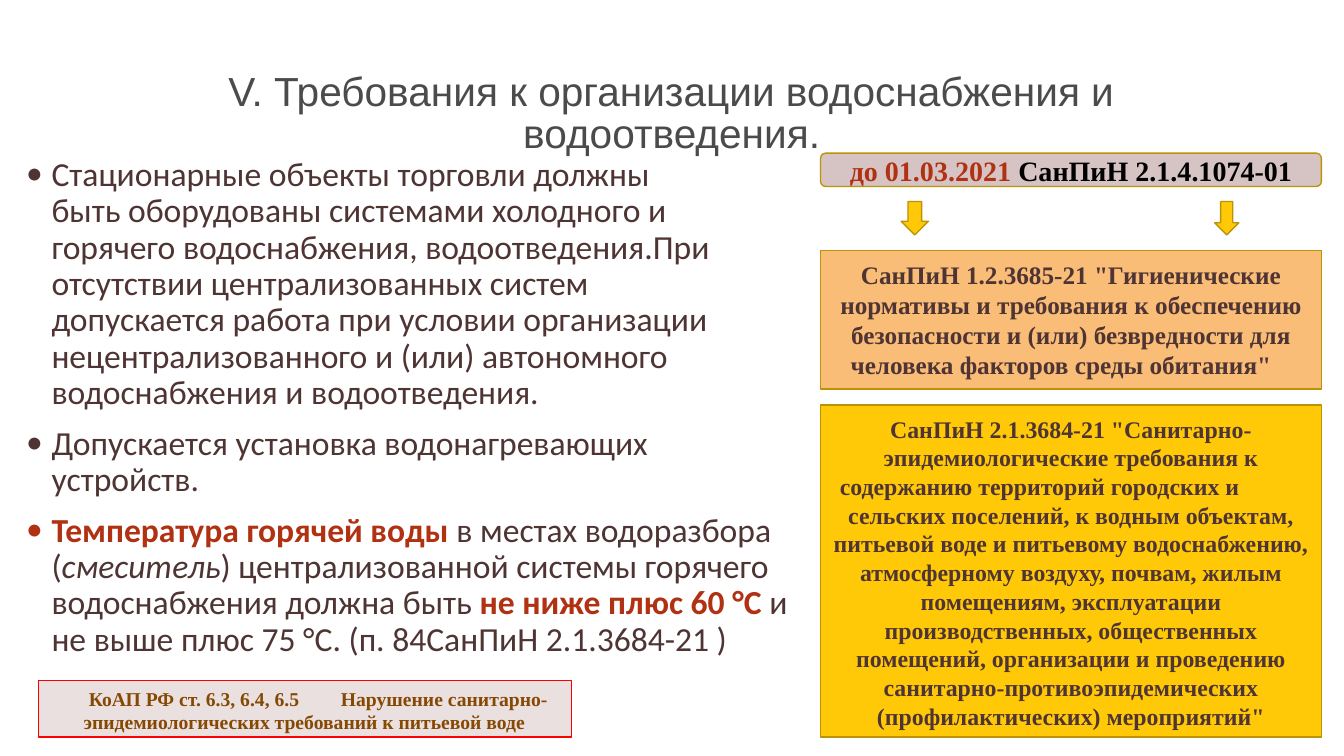
"""Build the slide on water supply and drainage requirements."""
from lxml import etree
from pptx import Presentation
from pptx import util as u
from pptx.dml.color import RGBColor
from pptx.enum import shapes, text
from pptx.oxml.ns import qn

COLORS = {
    "title": "4B4B4B", "body": "4F3434", "accent": "B13113", "black": "000000",
    "penalty": "854904", "outline": "BB9304", "red": "FF0000", "header": "D6C3C3",
    "peach": "FABD77", "yellow": "FFC908", "blush": "EBE0E0",
}
SERIF = "Times New Roman"

TITLE = "V. Требования к организации водоснабжения и водоотведения."
REQUIREMENTS = [
    [("Стационарные объекты торговли должны\vбыть оборудованы системами холодного и "
      "горячего водоснабжения, водоотведения.При отсутствии централизованных систем "
      "допускается работа при условии организации нецентрализованного и (или) "
      "автономного водоснабжения и водоотведения.", "plain")],
    [("Допускается установка водонагревающих устройств.", "plain")],
    [("Температура горячей воды ", "strong"),
     ("в местах водоразбора (", "plain"),
     ("смеситель", "italic"),
     (") централизованной системы горячего водоснабжения должна быть ", "plain"),
     ("не ниже плюс 60 °C ", "strong"),
     ("и не выше плюс 75 °C. (п. 84СанПиН 2.1.3684-21 )", "plain")],
]
REQUIREMENT_RIGHT_MARGINS = [2.03, 0, 0]
HEADER = [("до 01.03.2021 ", "accent"), ("СанПиН 2.1.4.1074-01", "black")]
REGULATIONS = [
    {"top": 6.32, "height": 3.48, "fill": "peach", "size": 18, "pitch": 21.4,
     "paragraphs": [
         ("СанПиН 1.2.3685-21 \"Гигиенические нормативы и требования к обеспечению "
          "безопасности и (или) безвредности для", 0.46, 0.46),
         ("человека факторов среды обитания\"", 0, 0.5)]},
    {"top": 10.21, "height": 8.36, "fill": "yellow", "size": 17, "pitch": 20.5,
     "paragraphs": [
         ("СанПиН 2.1.3684-21 \"Санитарно- эпидемиологические требования к", 1.58, 1.58),
         ("содержанию территорий городских и", 0, 1.58),
         ("сельских поселений, к водным объектам, питьевой воде и питьевому "
          "водоснабжению, атмосферному воздуху, почвам, жилым помещениям, "
          "эксплуатации", 0.32, 0.32),
         ("производственных, общественных помещений, организации и проведению "
          "санитарно-противоэпидемических (профилактических) мероприятий\"",
          0.86, 0.86)]},
]
PENALTY = [
    ("КоАП РФ ст. 6.3, 6.4, 6.5\tНарушение санитарно-", 1.27),
    ("эпидемиологических требований к питьевой воде", 1.14),
]
PENALTY_TAB = 6.85
ARROWS = [(22.71, 0.69), (30.61, 0.61)]
COLUMN_LEFT, COLUMN_WIDTH = 20.68, 12.62


def rgb(name):
    return RGBColor.from_string(COLORS[name])


def prepare(shape, top_inset=0):
    frame = shape.text_frame
    frame.word_wrap = True
    frame.margin_left = frame.margin_right = frame.margin_bottom = 0
    frame.margin_top = u.Cm(top_inset)
    frame.vertical_anchor = text.MSO_ANCHOR.TOP
    return frame


def add_box(slide, kind, place, fill, outline="outline"):
    shape = slide.shapes.add_shape(kind, *map(u.Cm, place))
    shape.shadow.inherit = False
    shape.fill.solid()
    shape.fill.fore_color.rgb = rgb(fill)
    shape.line.color.rgb = rgb(outline)
    shape.line.width = u.Pt(0.96)
    return shape


def add_textbox(slide, place):
    return prepare(slide.shapes.add_textbox(*map(u.Cm, place)))


def paragraph_at(frame, index):
    return frame.add_paragraph() if index else frame.paragraphs[0]


def set_margins(paragraph, left, right=0, first=0):
    properties = paragraph._p.get_or_add_pPr()
    for key, value in (("marL", left), ("marR", right), ("indent", first)):
        properties.set(key, str(int(u.Cm(value))))
    return properties


def style(paragraph, font_name, size, color, bold=False):
    for run in paragraph.runs:
        run.font.name = font_name
        run.font.size = u.Pt(size)
        run.font.color.rgb = rgb(color)
        run.font.bold = bold


def add_bullet(properties, color):
    bullet_color = etree.SubElement(properties, qn("a:buClr"))
    etree.SubElement(bullet_color, qn("a:srgbClr"), val=COLORS[color])
    etree.SubElement(properties, qn("a:buFont"), typeface="Calibri")
    etree.SubElement(properties, qn("a:buChar"), char="•")


def add_title(slide):
    paragraph = add_textbox(slide, (5.15, 1.83, 23.56, 2.2)).paragraphs[0]
    paragraph.text = TITLE
    paragraph.alignment = text.PP_ALIGN.CENTER
    paragraph.line_spacing = u.Pt(30.2)
    style(paragraph, "Arial", 29, "title")


def add_requirements(slide):
    frame = add_textbox(slide, (0.64, 3.96, 19.43, 12.7))
    for index, (parts, right) in enumerate(zip(REQUIREMENTS, REQUIREMENT_RIGHT_MARGINS)):
        paragraph = paragraph_at(frame, index)
        paragraph.text = "".join(parts[0][0]) if len(parts) == 1 else ""
        if len(parts) > 1:
            for words, _ in parts:
                paragraph.add_run().text = words
        properties = set_margins(paragraph, 0.66, right, -0.64)
        add_bullet(properties, "accent" if parts[0][1] == "strong" else "body")
        paragraph.line_spacing = u.Pt(25.9)
        if index:
            paragraph.space_before = u.Pt(10.4)
        style(paragraph, "Calibri", 24, "body")
        for run, (_, look) in zip(paragraph.runs, parts):
            run.font.italic = look == "italic"
            if look == "strong":
                run.font.bold = True
                run.font.color.rgb = rgb("accent")


def add_header(slide):
    shape = add_box(slide, shapes.MSO_SHAPE.ROUNDED_RECTANGLE,
                    (COLUMN_LEFT, 3.86, COLUMN_WIDTH, 0.84), "header")
    shape.adjustments[0] = 0.15
    frame = prepare(shape)
    frame.vertical_anchor = text.MSO_ANCHOR.MIDDLE
    paragraph = frame.paragraphs[0]
    paragraph.alignment = text.PP_ALIGN.CENTER
    for words, _ in HEADER:
        paragraph.add_run().text = words
    style(paragraph, SERIF, 20, "black", True)
    for run, (_, color) in zip(paragraph.runs, HEADER):
        run.font.color.rgb = rgb(color)


def add_regulation(slide, regulation):
    shape = add_box(slide, shapes.MSO_SHAPE.RECTANGLE,
                    (COLUMN_LEFT, regulation["top"], COLUMN_WIDTH, regulation["height"]),
                    regulation["fill"])
    frame = prepare(shape, 0.23)
    for index, (words, left, right) in enumerate(regulation["paragraphs"]):
        paragraph = paragraph_at(frame, index)
        paragraph.text = words
        set_margins(paragraph, left, right)
        paragraph.alignment = text.PP_ALIGN.CENTER
        paragraph.line_spacing = u.Pt(regulation["pitch"])
        style(paragraph, SERIF, regulation["size"], "body", True)


def add_penalty(slide):
    shape = add_box(slide, shapes.MSO_SHAPE.RECTANGLE,
                    (0.97, 17.15, 13.44, 1.42), "blush", "red")
    frame = prepare(shape, 0.15)
    for index, (words, left) in enumerate(PENALTY):
        paragraph = paragraph_at(frame, index)
        paragraph.text = words
        properties = set_margins(paragraph, left)
        if "\t" in words:
            tabs = etree.SubElement(properties, qn("a:tabLst"))
            etree.SubElement(tabs, qn("a:tab"), pos=str(int(u.Cm(PENALTY_TAB))), algn="l")
        paragraph.alignment = text.PP_ALIGN.LEFT
        style(paragraph, SERIF, 14, "penalty", True)


def main():
    presentation = Presentation()
    presentation.slide_width, presentation.slide_height = u.Cm(33.87), u.Cm(19.05)
    slide = presentation.slides.add_slide(presentation.slide_layouts[6])
    add_title(slide)
    add_requirements(slide)
    for regulation in REGULATIONS:
        add_regulation(slide, regulation)
    add_header(slide)
    for left, width in ARROWS:
        add_box(slide, shapes.MSO_SHAPE.DOWN_ARROW, (left, 5.08, width, 0.84), "yellow")
    add_penalty(slide)
    presentation.save("out.pptx")


if __name__ == "__main__":
    main()
